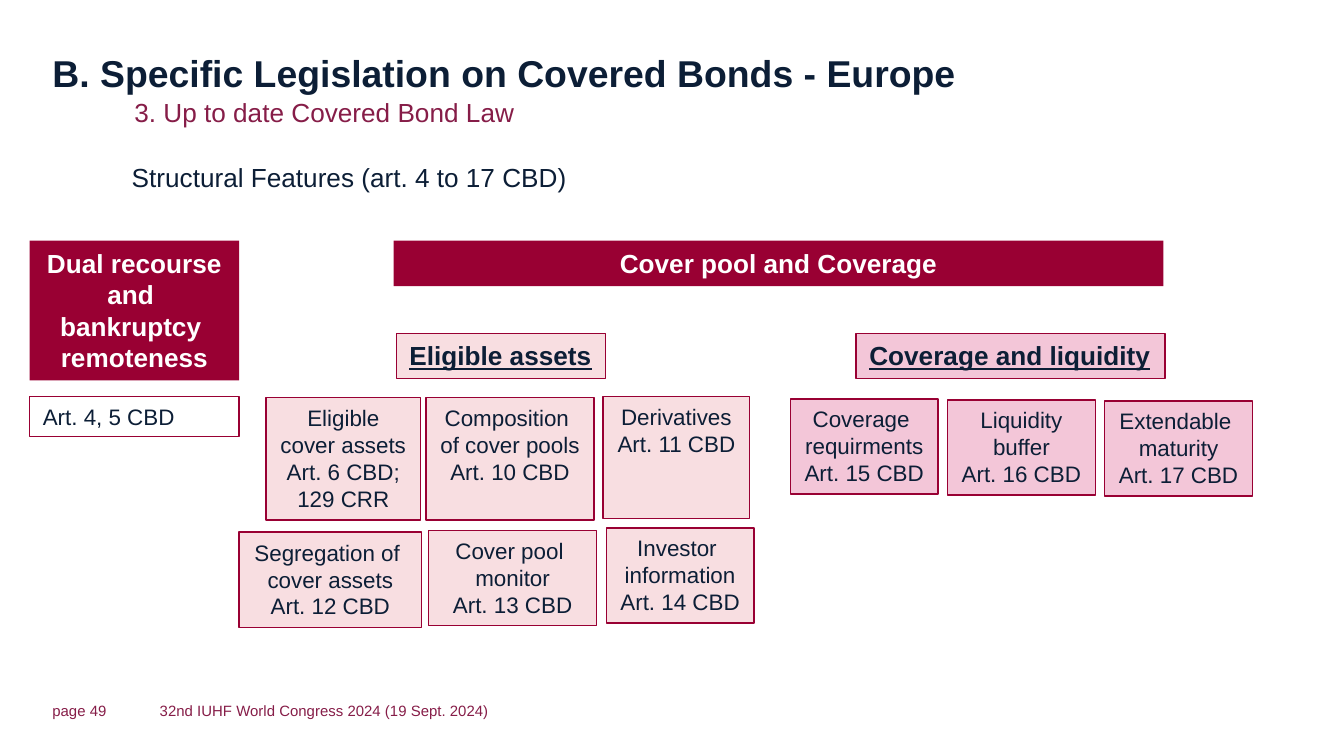
from pptx import Presentation
from pptx.dml.color import RGBColor
from pptx.enum.shapes import MSO_SHAPE
from pptx.enum.text import MSO_ANCHOR, MSO_AUTO_SIZE, PP_ALIGN
from pptx.util import Cm, Pt

RECTANGLE = MSO_SHAPE.RECTANGLE
TOP, MIDDLE = MSO_ANCHOR.TOP, MSO_ANCHOR.MIDDLE
LEFT, CENTER = PP_ALIGN.LEFT, PP_ALIGN.CENTER
NO_AUTOFIT = MSO_AUTO_SIZE.NONE

NAVY = RGBColor(0x0C, 0x1E, 0x36)
PLUM = RGBColor(0x86, 0x1D, 0x48)
CRIMSON = RGBColor(0x99, 0x00, 0x33)
ROSE = RGBColor(0xF8, 0xDE, 0xE1)
PINK = RGBColor(0xF3, 0xC6, 0xD8)
WHITE = RGBColor(0xFF, 0xFF, 0xFF)

TITLE_ONLY = 5

# Left, top, width and lines of each card
ASSET_CARDS = [
    (5.03, 7.52, 2.92, ["Eligible", "cover assets", "Art. 6 CBD;", "129 CRR"]),
    (8.05, 7.52, 3.18, ["Composition ", "of cover pools ", "Art. 10 CBD"]),
    (11.4, 7.49, 2.77, ["Derivatives", "Art. 11 CBD"]),
]
PROTECTION_CARDS = [
    (4.52, 10.06, 3.45, ["Segregation of ", "cover assets", "Art. 12 CBD"]),
    (8.1, 10.03, 3.18, ["Cover pool ", "monitor", "Art. 13 CBD"]),
    (11.46, 9.98, 2.79, ["Investor ", "information", "Art. 14 CBD"]),
]
COVERAGE_CARDS = [
    ["Coverage ", "requirments", "Art. 15 CBD"],
    ["Liquidity", "buffer", "Art. 16 CBD"],
    ["Extendable ", "maturity", "Art. 17 CBD"],
]


class SlideBuilder:
    font = "Arial"

    def __init__(self, slide):
        self.slide = slide

    def set_text(self, shape, lines, size, color, bold=False, underline=None,
                 align=LEFT, anchor=TOP, wrap=True, inset=True):
        frame = shape.text_frame
        frame.auto_size = NO_AUTOFIT
        frame.word_wrap = wrap
        frame.vertical_anchor = anchor
        if not inset:
            frame.margin_left = frame.margin_right = 0
            frame.margin_top = frame.margin_bottom = 0
        frame.text = "\n".join(lines)
        for para in frame.paragraphs:
            para.alignment = align
            para.font.name = self.font
            para.font.size = Pt(size)
            para.font.bold = bold
            para.font.underline = underline
            para.font.color.rgb = color

    def title(self, text, left, top, width, height):
        title = self.slide.shapes.title
        title.left, title.top = Cm(left), Cm(top)
        title.width, title.height = Cm(width), Cm(height)
        self.set_text(title, [text], 20, NAVY, bold=True, anchor=MIDDLE, inset=False)

    def label(self, text, left, top, width, height, size, color, **style):
        box = self.slide.shapes.add_textbox(Cm(left), Cm(top), Cm(width), Cm(height))
        self.set_text(box, [text], size, color, **style)

    def rectangle(self, left, top, width, height, fill=None, line=None):
        box = self.slide.shapes.add_shape(
            RECTANGLE, Cm(left), Cm(top), Cm(width), Cm(height))
        box.shadow.inherit = False
        if fill is None:
            box.fill.background()
        else:
            box.fill.solid()
            box.fill.fore_color.rgb = fill
        if line is None:
            box.line.fill.background()
        else:
            box.line.color.rgb = line
            box.line.width = Pt(0.75)
        return box

    def banner(self, lines, left, top, width, height):
        box = self.rectangle(left, top, width, height, CRIMSON)
        self.set_text(box, lines, 14, WHITE, bold=True, align=CENTER)

    def heading(self, text, left, top, width, height, fill):
        box = self.rectangle(left, top, width, height, fill, CRIMSON)
        self.set_text(box, [text], 14, NAVY, bold=True, underline=True, wrap=False)

    def card(self, lines, left, top, width, height, fill=None, align=CENTER):
        box = self.rectangle(left, top, width, height, fill, CRIMSON)
        self.set_text(box, lines, 12, NAVY, align=align)


def main():
    deck = Presentation()
    deck.slide_width, deck.slide_height = Cm(25.4), Cm(14.29)
    page = SlideBuilder(deck.slides.add_slide(deck.slide_layouts[TITLE_ONLY]))

    page.title("B. Specific Legislation on Covered Bonds - Europe", 0.99, 0.94, 23.42, 0.86)
    page.label("3. Up to date Covered Bond Law", 2.54, 1.83, 14.96, 0.61, 14, PLUM, inset=False)
    page.label("Structural Features (art. 4 to 17 CBD)", 2.24, 2.92, 12.32, 0.86, 14, NAVY)

    page.banner(["Dual recourse", "and ", "bankruptcy ", "remoteness"], 0.56, 4.55, 3.96, 2.64)
    page.card(["Art. 4, 5 CBD"], 0.56, 7.49, 3.96, 0.76, align=LEFT)

    page.banner(["Cover pool and Coverage"], 7.44, 4.55, 14.55, 0.86)
    page.heading("Eligible assets", 7.49, 6.3, 3.96, 0.86, ROSE)
    page.heading("Coverage and liquidity", 16.18, 6.3, 5.84, 0.86, PINK)

    for cards, height in ((ASSET_CARDS, 2.31), (PROTECTION_CARDS, 1.8)):
        for left, top, width, lines in cards:
            page.card(lines, left, top, width, height, ROSE)
    for column, lines in enumerate(COVERAGE_CARDS):
        page.card(lines, 14.94 + 2.97 * column, 7.54 + 0.02 * column, 2.79, 1.8, PINK)

    footer_style = {"size": 8, "color": PLUM, "anchor": MIDDLE, "inset": False}
    page.label("page 49", 0.99, 13.26, 1.6, 0.33, **footer_style)
    page.label("32nd IUHF World Congress 2024 (19 Sept. 2024)",
               3.02, 13.26, 11.33, 0.33, **footer_style)

    deck.save("out.pptx")


if __name__ == "__main__":
    main()
